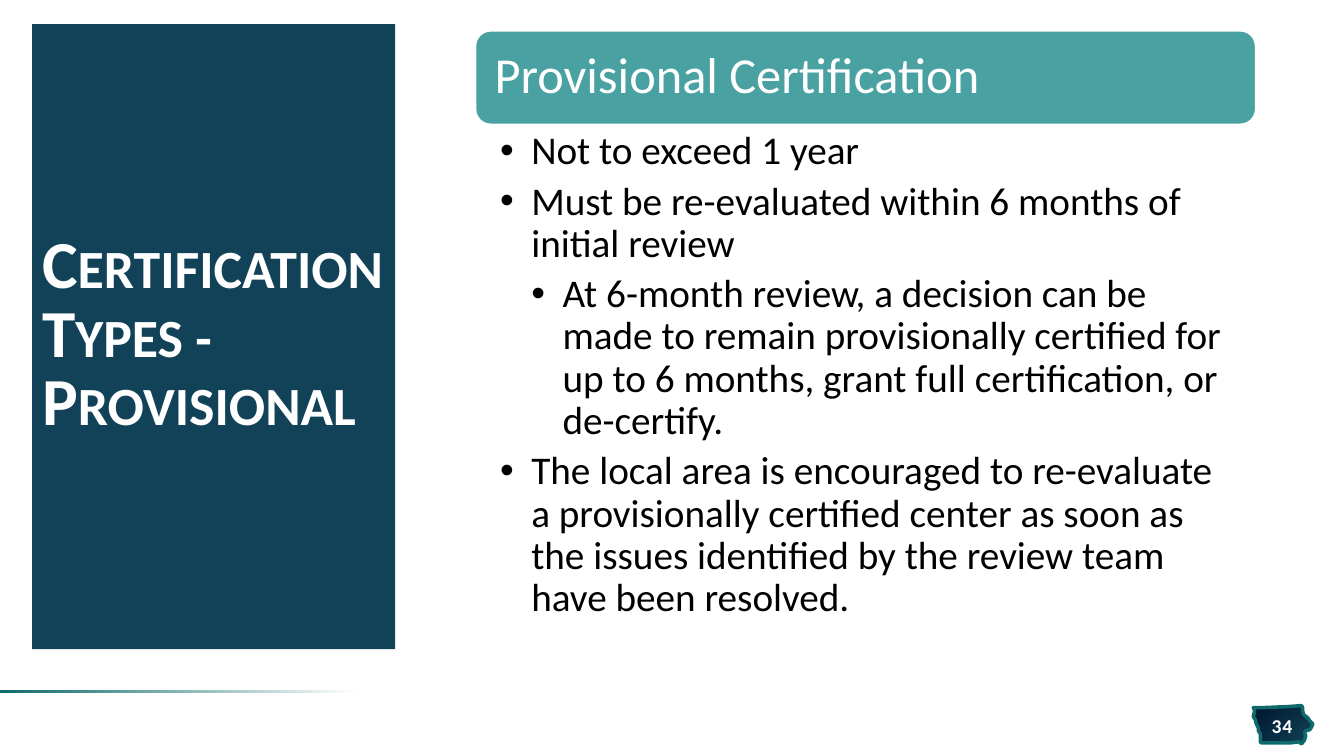
from dataclasses import dataclass

from lxml.etree import SubElement
from pptx import Presentation
from pptx.dml.color import RGBColor as RGB
from pptx.enum.shapes import MSO_SHAPE as SHAPE
from pptx.enum.text import MSO_ANCHOR as ANCHOR, PP_ALIGN as ALIGN
from pptx.oxml.ns import qn
from pptx.util import Inches, Pt


@dataclass(frozen=True)
class Theme:
    font: str = "Calibri"
    navy: RGB = RGB(0x11, 0x42, 0x57)
    midnight: RGB = RGB(0x00, 0x16, 0x2E)
    teal: RGB = RGB(0x0F, 0x6A, 0x6B)
    header: RGB = RGB(0x49, 0xA1, 0xA2)
    white: RGB = RGB(0xFF, 0xFF, 0xFF)
    black: RGB = RGB(0, 0, 0)
    title_pt: int = 48
    header_pt: int = 36
    body_pt: int = 28
    number_pt: int = 14


@dataclass(frozen=True)
class Box:
    left: float
    top: float
    width: float
    height: float

    def emu(self):
        return [Inches(v) for v in (self.left, self.top, self.width, self.height)]


@dataclass(frozen=True)
class Bullet:
    text: str
    level: int = 1


THEME = Theme()
INDENT = 0.31

BULLETS = [
    Bullet("Not to exceed 1 year"),
    Bullet("Must be re-evaluated within 6 months of initial review"),
    Bullet("At 6-month review, a decision can be made to remain provisionally certified "
           "for up to 6 months, grant full certification, or de-certify.", level=2),
    Bullet("The local area is encouraged to re-evaluate a provisionally certified center "
           "as soon as the issues identified by the review team have been resolved."),
]

# Hundredths of an inch, because freeform points are whole numbers
STATE_OUTLINE = [
    (1291, 700), (1277, 701), (1253, 702), (1243, 702), (1244, 704), (1244, 707),
    (1243, 711), (1245, 714), (1246, 718), (1248, 722), (1248, 725), (1250, 728),
    (1250, 736), (1251, 737), (1280, 737), (1288, 736), (1291, 738), (1294, 734),
    (1295, 730), (1294, 727), (1295, 725), (1299, 724), (1301, 721), (1302, 718),
    (1299, 715), (1297, 712), (1293, 709), (1292, 705), (1292, 702),
]


def set_gradient(sp, angle: float, stops: list[tuple[float, RGB]]) -> None:
    sp.fill.gradient()
    sp.fill.gradient_angle = angle
    for stop, (position, color) in zip(sp.fill.gradient_stops, stops):
        stop.position = position
        stop.color.rgb = color


def add_panel(slide, kind, box: Box, fill: RGB | None = None):
    sp = slide.shapes.add_shape(kind, *box.emu())
    sp.shadow.inherit = False
    sp.line.fill.background()
    if fill is not None:
        sp.fill.solid()
        sp.fill.fore_color.rgb = fill
    return sp


def set_frame(sp, anchor, insets: tuple[float, float, float, float]):
    """Wrap and anchor the text; insets run left, top, right, bottom."""
    tf = sp.text_frame
    tf.word_wrap = True
    tf.vertical_anchor = anchor
    tf.margin_left, tf.margin_top, tf.margin_right, tf.margin_bottom = map(Inches, insets)
    return tf


def add_run(p, text: str, size: int, color: RGB, bold: bool = False):
    r = p.add_run()
    r.text = text
    r.font.name = THEME.font
    r.font.size = Pt(size)
    r.font.bold = bold
    r.font.color.rgb = color
    return r


def add_bullet_mark(p, level: int) -> None:
    pPr = p._p.get_or_add_pPr()
    pPr.set("marL", str(Inches(INDENT * level)))
    pPr.set("indent", str(-Inches(INDENT)))
    SubElement(pPr, qn("a:buFont")).set("typeface", "Arial")
    SubElement(pPr, qn("a:buChar")).set("char", "•")


def add_title(slide) -> None:
    sp = add_panel(slide, SHAPE.RECTANGLE, Box(0.32, 0.24, 3.6, 6.2), THEME.navy)
    p = set_frame(sp, ANCHOR.MIDDLE, (0.1, 0.05, 0, 0.05)).paragraphs[0]
    p.alignment = ALIGN.LEFT
    p.line_spacing = 0.85
    r = add_run(p, "Certification Types - Provisional", THEME.title_pt, THEME.white, bold=True)
    r.font._element.set("cap", "small")


def add_header(slide) -> None:
    sp = add_panel(slide, SHAPE.ROUNDED_RECTANGLE, Box(4.71, 0.3, 7.75, 0.94), THEME.header)
    sp.line.color.rgb = THEME.white
    sp.line.width = Pt(2)
    p = set_frame(sp, ANCHOR.MIDDLE, (0.15, 0.15, 0.15, 0.15)).paragraphs[0]
    p.alignment = ALIGN.LEFT
    p.line_spacing = 0.9
    add_run(p, "Provisional Certification", THEME.header_pt, THEME.white)


def add_body(slide) -> None:
    sp = slide.shapes.add_textbox(*Box(4.71, 1.25, 7.75, 5.13).emu())
    tf = set_frame(sp, ANCHOR.TOP, (0.25, 0.05, 0.28, 0.05))
    for i, bullet in enumerate(BULLETS):
        p = tf.add_paragraph() if i else tf.paragraphs[0]
        p.level = bullet.level
        p.line_spacing = 0.9
        p.space_before = Pt(0)
        p.space_after = Pt(THEME.body_pt * 0.2)
        add_bullet_mark(p, bullet.level)
        add_run(p, bullet.text, THEME.body_pt, THEME.black)


def add_page_badge(slide) -> None:
    builder = slide.shapes.build_freeform(*STATE_OUTLINE[0], scale=Inches(0.01))
    builder.add_line_segments(STATE_OUTLINE[1:], close=True)
    sp = builder.convert_to_shape()
    sp.shadow.inherit = False
    set_gradient(sp, 315, [(0, THEME.midnight), (1, THEME.navy)])
    sp.line.color.rgb = THEME.teal
    sp.line.width = Pt(2.5)

    number = slide.shapes.add_textbox(*Box(12.46, 7.08, 0.51, 0.23).emu())
    p = set_frame(number, ANCHOR.MIDDLE, (0, 0.05, 0, 0.05)).paragraphs[0]
    p.alignment = ALIGN.CENTER
    r = add_run(p, "34", THEME.number_pt, THEME.white, bold=True)
    r.font._element.set("spc", "50")


def main() -> None:
    prs = Presentation()
    prs.slide_width, prs.slide_height = Inches(13.33), Inches(7.5)
    slide = prs.slides.add_slide(prs.slide_layouts[6])
    rule = add_panel(slide, SHAPE.RECTANGLE, Box(0, 6.85, 3.8, 0.03))
    set_gradient(rule, 180, [(0.06, THEME.white), (1, THEME.teal)])
    add_title(slide)
    add_page_badge(slide)
    add_header(slide)
    add_body(slide)
    prs.save("out.pptx")


if __name__ == "__main__":
    main()
